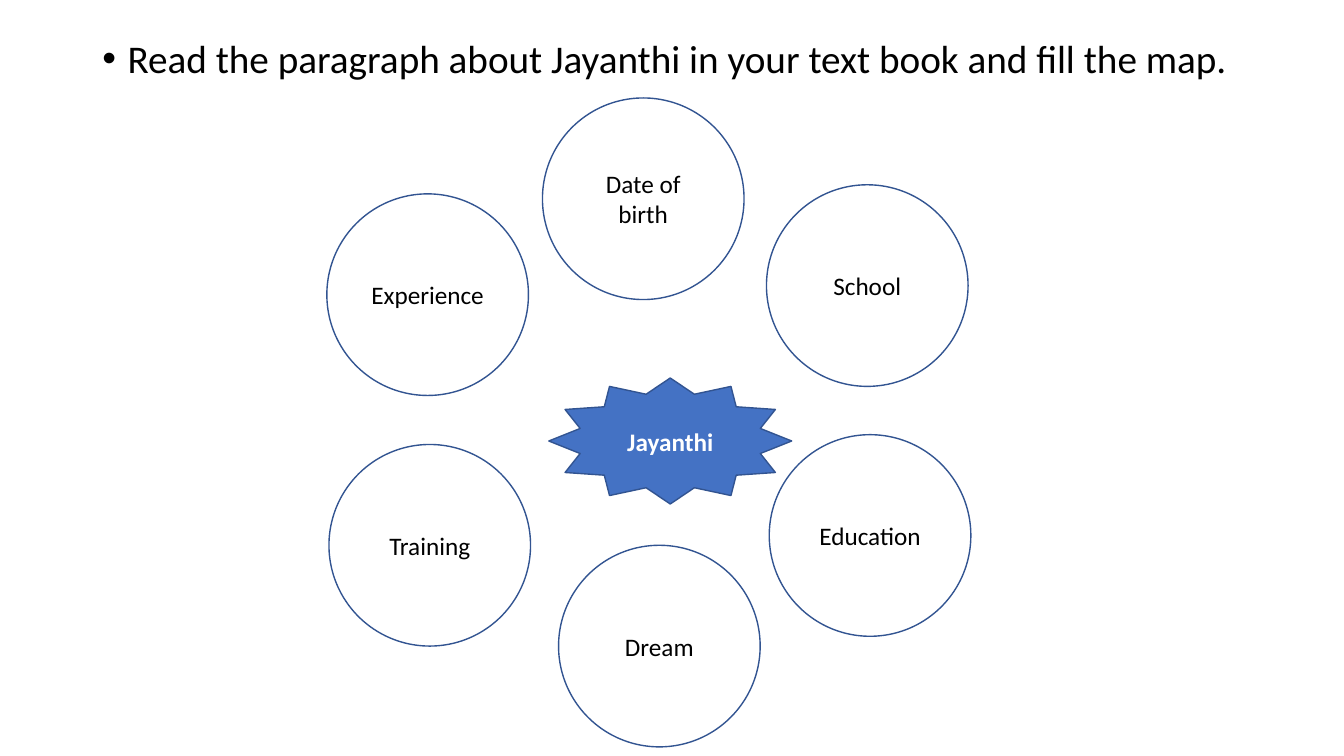
from lxml import etree
from pptx import Presentation
from pptx.dml.color import RGBColor
from pptx.enum.shapes import MSO_SHAPE
from pptx.enum.text import MSO_ANCHOR, MSO_AUTO_SIZE, PP_ALIGN
from pptx.oxml.ns import qn
from pptx.util import Pt

OVAL = MSO_SHAPE.OVAL
STAR = MSO_SHAPE.STAR_12_POINT
MIDDLE = MSO_ANCHOR.MIDDLE
TOP = MSO_ANCHOR.TOP
NO_AUTOFIT = MSO_AUTO_SIZE.NONE
CENTER = PP_ALIGN.CENTER
LEFT = PP_ALIGN.LEFT

BLACK = RGBColor(0x00, 0x00, 0x00)
WHITE = RGBColor(0xFF, 0xFF, 0xFF)
BLUE = RGBColor(0x44, 0x72, 0xC4)
OUTLINE = RGBColor(0x32, 0x54, 0x91)
FONT = "Calibri"

CIRCLE_SIZE = 144
TOPICS = [
    ("Date of birth", 154, 0),
    ("Education", 316, 240.5),
    ("Dream", 165.5, 319.5),
    ("Training", 1.5, 247.5),
    ("Experience", 0, 68.5),
    ("School", 314, 62),
]


def style_font(paragraph, size, color, bold=False):
    font = paragraph.font
    font.name = FONT
    font.size = Pt(size)
    font.bold = bold
    font.color.rgb = color


def add_instruction(slide, left, top, width, height):
    instruction = slide.placeholders[1]
    instruction.left, instruction.top = Pt(left), Pt(top)
    instruction.width, instruction.height = Pt(width), Pt(height)
    frame = instruction.text_frame
    frame.auto_size = NO_AUTOFIT
    frame.word_wrap = True
    frame.vertical_anchor = TOP
    frame.text = "Read the paragraph about Jayanthi in your text book and fill the map."
    paragraph = frame.paragraphs[0]
    properties = paragraph._p.get_or_add_pPr()
    properties.set("marL", str(Pt(18)))
    properties.set("indent", str(-Pt(18)))
    etree.SubElement(properties, qn("a:buFont")).set("typeface", "Arial")
    etree.SubElement(properties, qn("a:buChar")).set("char", "•")
    paragraph.alignment = LEFT
    paragraph.line_spacing = 0.9
    paragraph.space_before = Pt(0)
    style_font(paragraph, 28, BLACK)


def add_node(slide, kind, label, left, top, width, height, fill, color, bold=False):
    node = slide.shapes.add_shape(kind, Pt(left), Pt(top), Pt(width), Pt(height))
    node.shadow.inherit = False
    node.fill.solid()
    node.fill.fore_color.rgb = fill
    node.line.color.rgb = OUTLINE
    node.line.width = Pt(1)
    frame = node.text_frame
    frame.word_wrap = True
    frame.vertical_anchor = MIDDLE
    frame.text = label
    paragraph = frame.paragraphs[0]
    paragraph.alignment = CENTER
    style_font(paragraph, 18, color, bold)
    return node


def add_map(slide, left, top):
    for label, across, down in TOPICS:
        add_node(slide, OVAL, label, left + across, top + down,
                 CIRCLE_SIZE, CIRCLE_SIZE, WHITE, BLACK)
    jayanthi = add_node(slide, STAR, "Jayanthi", left + 158.5, top + 200,
                        173.5, 90, BLUE, WHITE, bold=True)
    jayanthi.adjustments[0] = 0.384


def main():
    deck = Presentation()
    deck.slide_width, deck.slide_height = Pt(960), Pt(540)
    slide = deck.slides.add_slide(deck.slide_layouts[1])
    heading = slide.shapes.title._element
    heading.getparent().remove(heading)
    add_instruction(slide, 66, 24.5, 852, 515.5)
    add_map(slide, 233.5, 70)
    deck.save("out.pptx")


if __name__ == "__main__":
    main()
